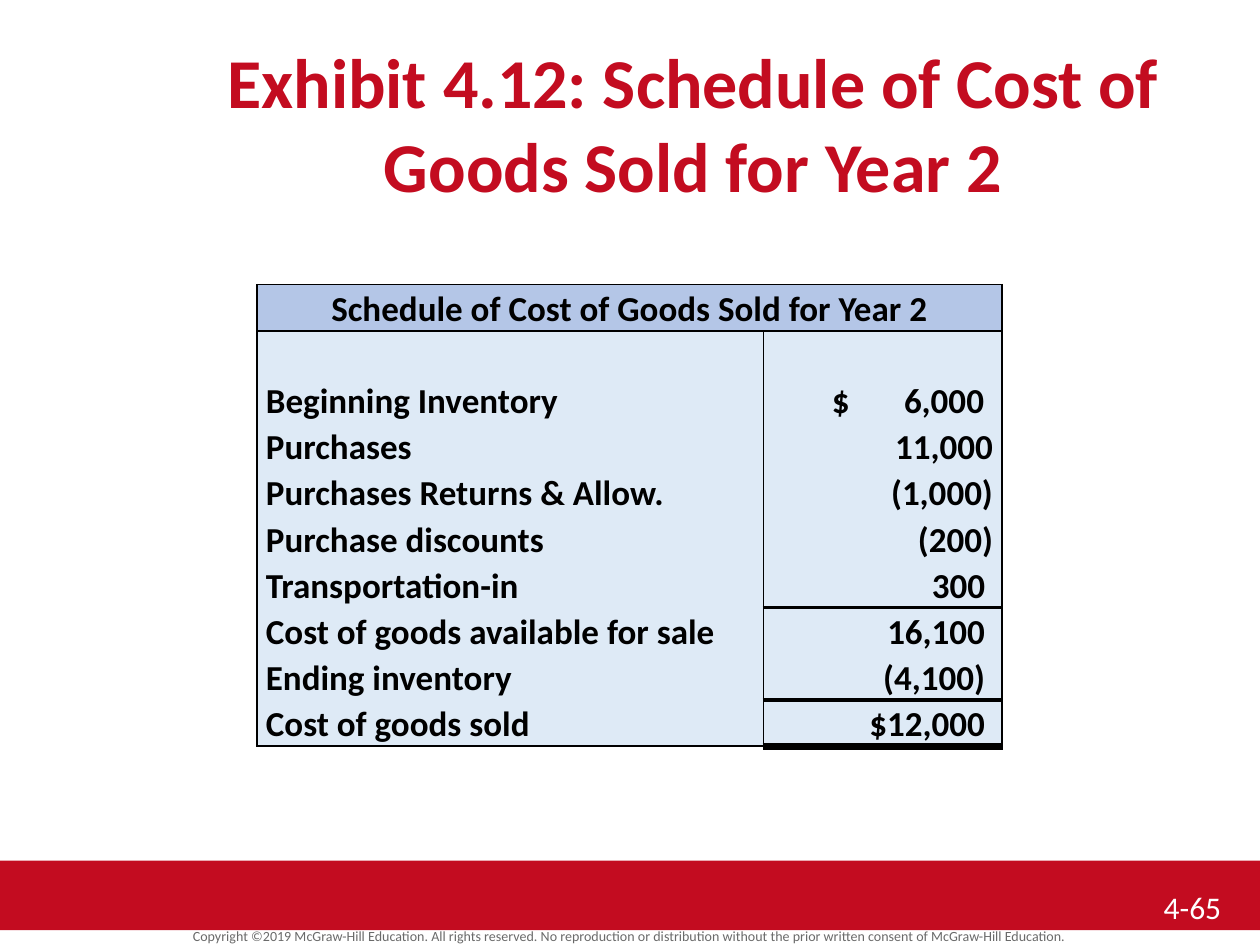
from dataclasses import dataclass

import pptx
import pptx.dml.color
import pptx.enum.shapes
import pptx.enum.text
import pptx.oxml
import pptx.oxml.ns
import pptx.util
from pptx.dml.color import RGBColor
from pptx.util import Cm, Pt

RED = RGBColor(0xC3, 0x0C, 0x20)
GREY = RGBColor(0x6A, 0x6A, 0x6A)
WHITE = RGBColor(0xFF, 0xFF, 0xFF)
BLACK = RGBColor(0, 0, 0)
HEADER_BLUE = RGBColor(0xB4, 0xC6, 0xE7)
BODY_BLUE = RGBColor(0xDE, 0xEA, 0xF6)
FONT = "Calibri"
ALIGN = pptx.enum.text.PP_ALIGN
ANCHOR = pptx.enum.text.MSO_ANCHOR
THIN, RULE, TOTAL = 1, 2.25, 4.5  # border widths in points


@dataclass
class ScheduleRow:
    label: str
    amount: str
    rule_below: float = 0


SCHEDULE = [
    ScheduleRow("", ""),
    ScheduleRow("Beginning Inventory", "\t$\t6,000"),
    ScheduleRow("Purchases", "11,000"),
    ScheduleRow("Purchases Returns & Allow.", "(1,000)"),
    ScheduleRow("Purchase discounts", "(200)"),
    ScheduleRow("Transportation-in", "300 ", RULE),
    ScheduleRow("Cost of goods available for sale", "16,100 "),
    ScheduleRow("Ending inventory", "(4,100) ", RULE),
    ScheduleRow("Cost of goods sold", "$12,000 ", TOTAL),
]


def add_text(paragraph, text: str, size: float, color: RGBColor,
             bold: bool = False, align=ALIGN.LEFT) -> None:
    paragraph.alignment = align
    run = paragraph.add_run()
    run.text = text
    run.font.name = FONT
    run.font.size = Pt(size)
    run.font.bold = bold
    run.font.color.rgb = color


def set_borders(cell, left: float = 0, right: float = 0,
                top: float = 0, bottom: float = 0) -> None:
    properties = cell._tc.get_or_add_tcPr()
    for side, width in zip("LRTB", (left, right, top, bottom)):
        paint = (f'<a:solidFill><a:srgbClr val="{BLACK}"/></a:solidFill>'
                 if width else "<a:noFill/>")
        properties.append(pptx.oxml.parse_xml(
            f'<a:ln{side} {pptx.oxml.ns.nsdecls("a")} w="{int(Pt(width))}">'
            f"{paint}</a:ln{side}>"))


def add_tabs(paragraph, *stops) -> None:
    tabs = "".join(f'<a:tab pos="{int(position)}" algn="{align}"/>'
                   for position, align in stops)
    paragraph._p.get_or_add_pPr().append(pptx.oxml.parse_xml(
        f'<a:tabLst {pptx.oxml.ns.nsdecls("a")}>{tabs}</a:tabLst>'))


def fill_cell(cell, text: str, fill: RGBColor, align) -> None:
    cell.fill.solid()
    cell.fill.fore_color.rgb = fill
    cell.vertical_anchor = ANCHOR.BOTTOM
    cell.margin_left = cell.margin_right = Cm(0.18)
    cell.margin_top = cell.margin_bottom = 0
    if not text:
        return
    paragraph = cell.text_frame.paragraphs[0]
    paragraph.line_spacing = 1.07
    if "\t" in text:  # currency sign and amount sit on tab stops
        add_tabs(paragraph, (Cm(1.2), "l"), (Cm(4.27), "r"))
        align = ALIGN.LEFT
    add_text(paragraph, text, 20, BLACK, True, align)


def add_schedule(slide) -> None:
    row_count = len(SCHEDULE) + 1
    row_height = Cm(0.93)
    table = slide.shapes.add_table(
        row_count, 2, Cm(5.18), Cm(5.74), Cm(15.02), row_height * row_count).table
    table.first_row = table.horz_banding = False
    table.columns[0].width, table.columns[1].width = Cm(10.21), Cm(4.81)
    for row in table.rows:
        row.height = row_height

    # Heading across both columns
    heading = table.cell(0, 0)
    heading.merge(table.cell(0, 1))
    for column in range(2):
        set_borders(table.cell(0, column), THIN, THIN, THIN, THIN)
    fill_cell(heading, "Schedule of Cost of Goods Sold for Year 2",
              HEADER_BLUE, ALIGN.CENTER)

    # Labels and amounts
    rule_above = THIN
    for index, entry in enumerate(SCHEDULE, start=1):
        label, amount = table.cell(index, 0), table.cell(index, 1)
        set_borders(label, THIN, THIN, THIN if index == 1 else 0,
                    THIN if index == len(SCHEDULE) else 0)
        set_borders(amount, THIN, THIN, rule_above, entry.rule_below)
        fill_cell(label, entry.label, BODY_BLUE, ALIGN.LEFT)
        fill_cell(amount, entry.amount, BODY_BLUE, ALIGN.RIGHT)
        rule_above = entry.rule_below


def add_text_box(slide, left, top, width, height):
    frame = slide.shapes.add_textbox(left, top, width, height).text_frame
    frame.word_wrap = True
    return frame


def main() -> None:
    presentation = pptx.Presentation()
    presentation.slide_width, presentation.slide_height = Cm(25.4), Cm(19.05)
    slide = presentation.slides.add_slide(presentation.slide_layouts[5])

    # Footer band and copyright line
    band = slide.shapes.add_shape(pptx.enum.shapes.MSO_SHAPE.RECTANGLE,
                                  0, Cm(17.35), Cm(25.4), Cm(1.4))
    band.shadow.inherit = False
    band.fill.solid()
    band.fill.fore_color.rgb = RED
    band.line.fill.background()
    copyright_frame = add_text_box(slide, 0, Cm(18.64), Cm(25.4), Cm(0.48))
    paragraph = copyright_frame.paragraphs[0]
    paragraph.line_spacing = 0.8
    add_text(paragraph, "Copyright ©2019 McGraw-Hill Education. All rights reserved. "
             "No reproduction or distribution without the prior written consent of "
             "McGraw-Hill Education.", 8, GREY, align=ALIGN.CENTER)

    # Title
    title = slide.shapes.title
    title.left, title.top, title.width, title.height = (
        Cm(2.54), Cm(0.64), Cm(22.86), Cm(1.7))
    title.text_frame.auto_size = pptx.enum.text.MSO_AUTO_SIZE.NONE
    title.text_frame.vertical_anchor = ANCHOR.TOP
    add_text(title.text_frame.paragraphs[0],
             "Exhibit 4.12: Schedule of Cost of Goods Sold for Year 2",
             40, RED, True, ALIGN.CENTER)

    # Page number
    number_frame = add_text_box(slide, Cm(23.06), Cm(17.78), Cm(2.34), Cm(1.07))
    number_frame.margin_left = Cm(0.4)
    add_text(number_frame.paragraphs[0], "4-65", 18, WHITE)

    add_schedule(slide)
    presentation.save("out.pptx")


if __name__ == "__main__":
    main()
